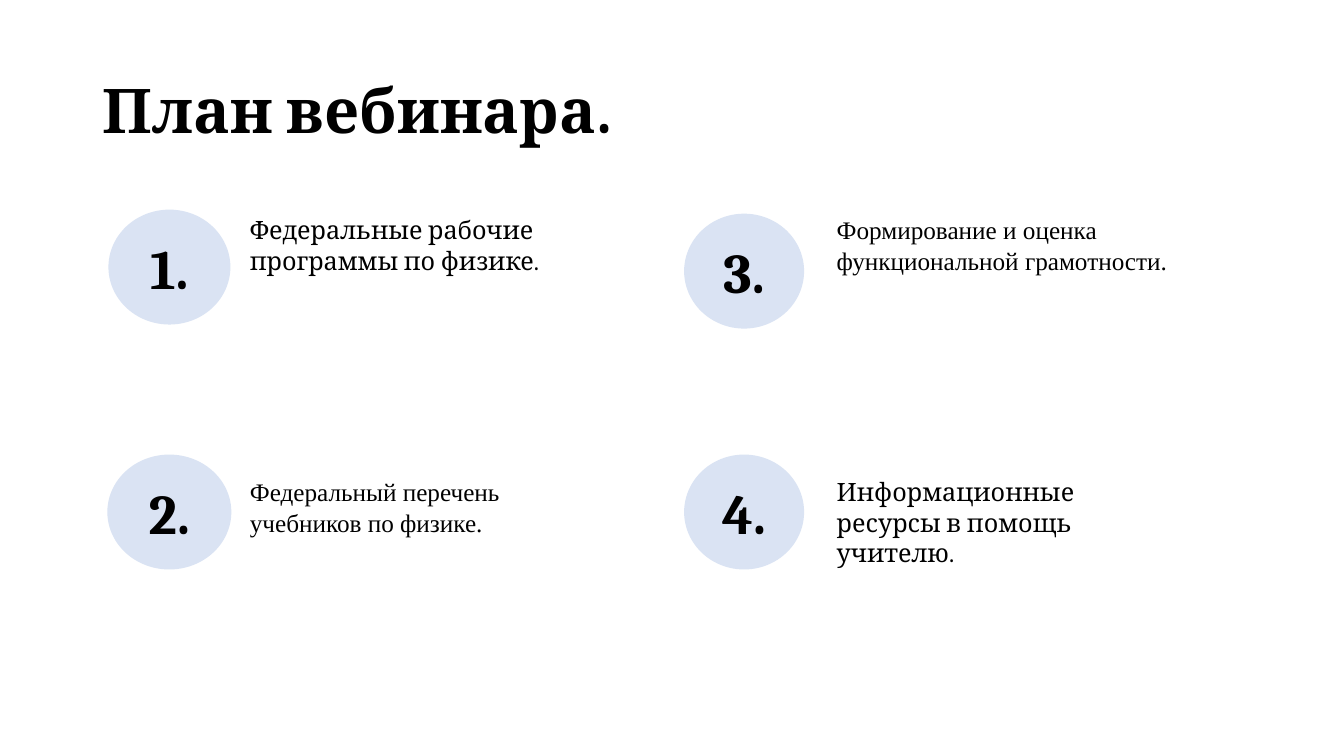
from dataclasses import dataclass

from pptx import Presentation
from pptx.dml.color import RGBColor
from pptx.enum.shapes import MSO_SHAPE as Shape
from pptx.enum.text import MSO_ANCHOR as Anchor, MSO_AUTO_SIZE as AutoSize, PP_ALIGN as Align
from pptx.util import Inches, Pt


@dataclass(frozen=True)
class Theme:
    ink: RGBColor = RGBColor(0x00, 0x00, 0x00)
    badge: RGBColor = RGBColor(0xDA, 0xE3, 0xF3)
    serif: str = "Cambria"
    times: str = "Times New Roman"
    title_size: int = 44
    number_size: int = 40
    body_size: int = 18


class PlanSlide:
    def __init__(self, deck, theme):
        self.theme = theme
        self.page = deck.slides.add_slide(deck.slide_layouts[6])

    def add_span(self, para, text, size, font, bold=False):
        span = para.add_run()
        span.text = text
        span.font.size = Pt(size)
        span.font.name = font
        span.font.bold = bold
        span.font.color.rgb = self.theme.ink

    def text_box(self, left, top, width, height):
        box = self.page.shapes.add_textbox(
            Inches(left), Inches(top), Inches(width), Inches(height))
        box.text_frame.word_wrap = True
        return box.text_frame

    def title(self, text):
        frame = self.text_box(0.92, 0.4, 11.5, 1.45)
        frame.vertical_anchor = Anchor.MIDDLE
        para = frame.paragraphs[0]
        para.line_spacing = 0.9
        self.add_span(para, text, self.theme.title_size, self.theme.serif, bold=True)

    def badge(self, number, center, top, width):
        oval = self.page.shapes.add_shape(
            Shape.OVAL, Inches(center - width / 2), Inches(top), Inches(width), Inches(1.14))
        oval.shadow.inherit = False
        oval.fill.solid()
        oval.fill.fore_color.rgb = self.theme.badge
        oval.line.fill.background()
        frame = oval.text_frame
        frame.vertical_anchor = Anchor.MIDDLE
        para = frame.paragraphs[0]
        para.alignment = Align.CENTER
        self.add_span(para, f"{number}.", self.theme.number_size, self.theme.serif, bold=True)

    def topic(self, text, left, top, width, font):
        frame = self.text_box(left, top, width, 0.71)
        frame.auto_size = AutoSize.SHAPE_TO_FIT_TEXT
        self.add_span(frame.paragraphs[0], text, self.theme.body_size, font)


def main():
    deck = Presentation()
    deck.slide_width, deck.slide_height = Inches(13.33), Inches(7.5)
    theme = Theme()
    slide = PlanSlide(deck, theme)
    slide.title("План вебинара.")

    # Two columns of two topics, numbered down each column
    badge_centers = (1.68, 7.38)
    topic_lefts = (2.38, 8.2)
    topic_tops = (2.08, 4.68)

    # Topic, font, topic width, badge top, badge width
    topics = [
        ("Федеральные рабочие программы по физике.", theme.serif, 4.17, 2.08, 1.21),
        ("Федеральный перечень учебников по физике.", theme.times, 3.81, 4.51, 1.23),
        ("Формирование и оценка функциональной грамотности.", theme.times, 4.61, 2.12, 1.19),
        ("Информационные ресурсы в помощь учителю.", theme.serif, 3.41, 4.51, 1.19),
    ]
    for index, (text, font, width, badge_top, badge_width) in enumerate(topics):
        column, row = divmod(index, 2)
        slide.badge(index + 1, badge_centers[column], badge_top, badge_width)
        slide.topic(text, topic_lefts[column], topic_tops[row], width, font)

    deck.save("out.pptx")


if __name__ == "__main__":
    main()
